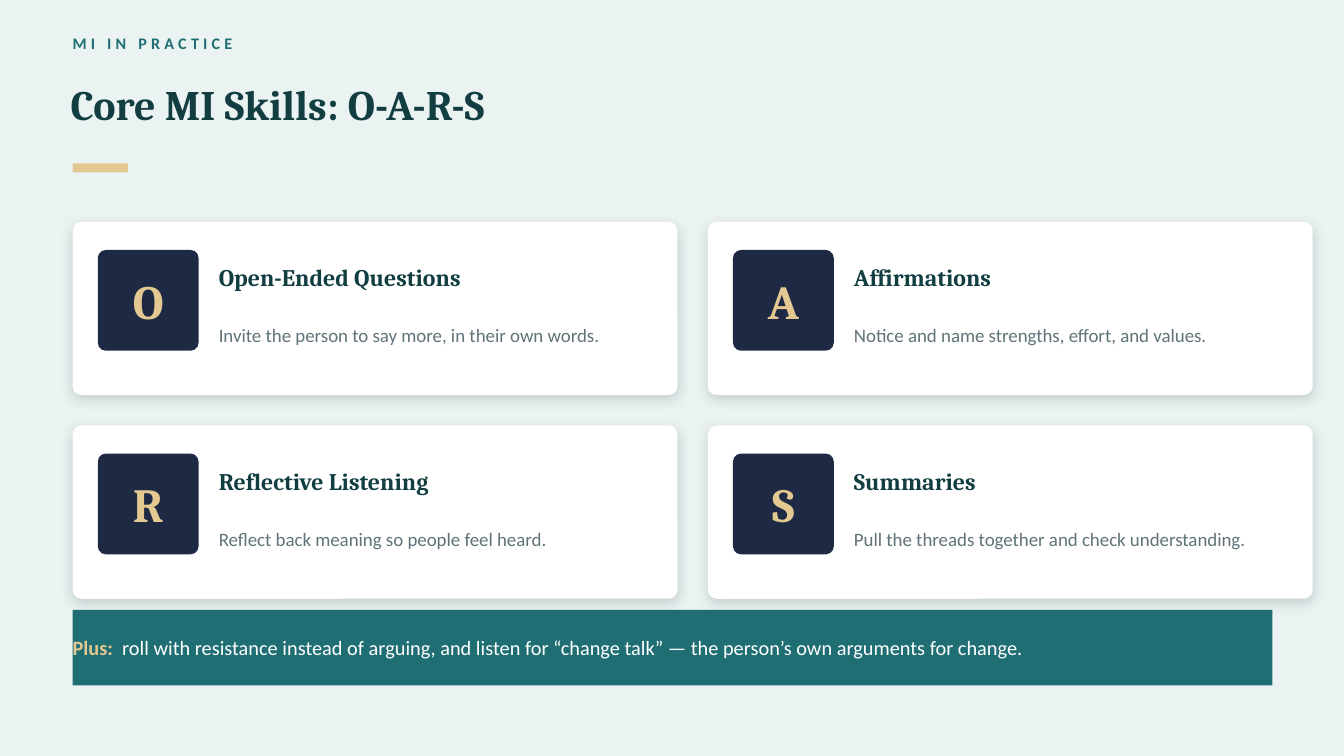
"""Build the slide on the four core MI skills, O-A-R-S."""
from dataclasses import dataclass

from lxml.etree import SubElement
from pptx import Presentation
from pptx.dml.color import RGBColor
from pptx.enum.shapes import MSO_SHAPE
from pptx.enum.text import MSO_ANCHOR, PP_ALIGN
from pptx.oxml import parse_xml
from pptx.oxml.ns import nsdecls, qn
from pptx.util import Inches, Pt


@dataclass(frozen=True)
class Theme:
    page: str = "EAF3F2"
    card: str = "FFFFFF"
    navy: str = "1E2A44"
    gold: str = "E4C892"
    teal: str = "1F6E73"
    deep: str = "123E42"
    gray: str = "5F7378"
    shade: str = "1A3033"
    serif: str = "Cambria"
    sans: str = "Calibri"
    label: float = 11.5
    title: float = 30
    letter: float = 34
    head: float = 17
    body: float = 13.5
    note: float = 14.5


theme = Theme()
deck = Presentation()
deck.slide_width, deck.slide_height = Inches(13.33), Inches(7.5)
slide = deck.slides.add_slide(deck.slide_layouts[6])
slide.background.fill.solid()
slide.background.fill.fore_color.rgb = RGBColor.from_string(theme.page)


def draw(left, top, width, height, fill, radius=None):
    """Add a filled rectangle, rounded when a radius share is given."""
    kind = MSO_SHAPE.RECTANGLE if radius is None else MSO_SHAPE.ROUNDED_RECTANGLE
    shape = slide.shapes.add_shape(kind, *map(Inches, (left, top, width, height)))
    if radius is not None:
        shape.adjustments[0] = radius
    shape.shadow.inherit = False
    shape.fill.solid()
    shape.fill.fore_color.rgb = RGBColor.from_string(fill)
    shape.line.fill.background()
    return shape


def write(text, at=None, shape=None, size=12, font=theme.sans, color=theme.deep,
          bold=False, align=PP_ALIGN.LEFT, track=0, lead=None):
    """Add a run to a shape, or to a new text box placed at the given box."""
    shape = shape or slide.shapes.add_textbox(*map(Inches, at))
    frame = shape.text_frame
    frame.word_wrap = True
    frame.vertical_anchor = MSO_ANCHOR.MIDDLE
    frame.margin_left = frame.margin_right = frame.margin_top = frame.margin_bottom = 0
    para = frame.paragraphs[0]
    para.alignment = align
    if lead:
        para.line_spacing = lead
    run = para.add_run()
    run.text = text
    run.font.size, run.font.name, run.font.bold = Pt(size), font, bold
    run.font.color.rgb = RGBColor.from_string(color)
    if track:
        run.font._element.set("spc", str(int(track * 100)))


left = 0.72
write("MI IN PRACTICE", at=(left, 0.28, 11, 0.3), size=theme.label,
      color=theme.teal, bold=True, track=3)
write("Core MI Skills: O-A-R-S", at=(0.7, 0.55, 12, 0.95), size=theme.title,
      font=theme.serif, bold=True)
draw(left, 1.62, 0.55, 0.09, theme.gold)

skills = [
    ("O", "Open-Ended Questions", "Invite the person to say more, in their own words."),
    ("A", "Affirmations", "Notice and name strengths, effort, and values."),
    ("R", "Reflective Listening", "Reflect back meaning so people feel heard."),
    ("S", "Summaries", "Pull the threads together and check understanding."),
]
wide, high, gap = 6, 1.72, 0.3
for place, (letter, head, body) in enumerate(skills):
    row, col = divmod(place, 2)
    x, y = left + col * (wide + gap), 2.2 + row * (high + gap)

    card = draw(x, y, wide, high, theme.card, radius=0.052)
    glow = card._element.spPr.find(qn("a:effectLst"))
    cast = SubElement(glow, qn("a:outerShdw"), blurRad=str(Pt(9)), dist=str(Pt(3)),
                      dir="5400000", algn="bl", rotWithShape="0")
    cast.append(parse_xml(f'<a:srgbClr {nsdecls("a")} val="{theme.shade}">'
                          '<a:alpha val="18000"/></a:srgbClr>'))

    tile = draw(x + 0.25, y + 0.28, 1, 1, theme.navy, radius=0.08)
    write(letter, shape=tile, size=theme.letter, font=theme.serif,
          color=theme.gold, bold=True, align=PP_ALIGN.CENTER)
    write(head, at=(x + 1.45, y + 0.3, 4.3, 0.5), size=theme.head,
          font=theme.serif, bold=True)
    write(body, at=(x + 1.45, y + 0.82, 4.3, 0.6), size=theme.body,
          color=theme.gray, lead=1.02)

band = draw(left, 6.05, 11.9, 0.75, theme.teal)
write("Plus:", shape=band, size=theme.note, color=theme.gold, bold=True)
write(" ", shape=band, size=theme.note, color=theme.gold, bold=True, track=3.3)
write("roll with resistance instead of arguing, and listen for “change talk” — "
      "the person’s own arguments for change.",
      shape=band, size=theme.note, color=theme.card)

deck.save("out.pptx")
